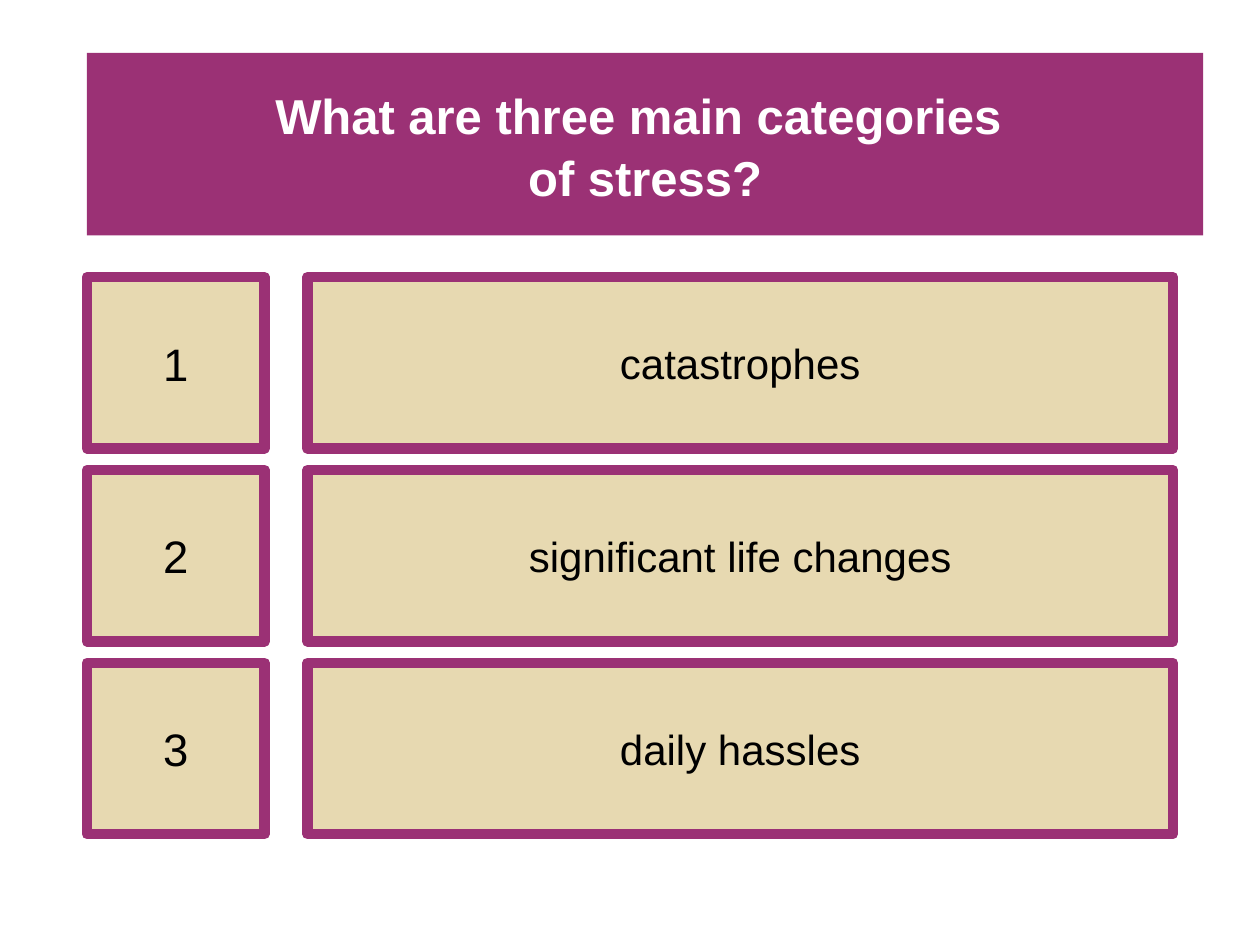
from dataclasses import dataclass
from pptx import Presentation
from pptx.dml.color import RGBColor
from pptx.enum.shapes import MSO_SHAPE
from pptx.enum.text import MSO_ANCHOR, PP_ALIGN
from pptx.util import Pt

RECT = MSO_SHAPE.RECTANGLE
MIDDLE = MSO_ANCHOR.MIDDLE
CENTER = PP_ALIGN.CENTER


@dataclass(frozen=True)
class Theme:
    font: str = "Arial"
    plum: str = "9B3175"
    sand: str = "E7D9B1"
    white: str = "FFFFFF"
    black: str = "000000"
    title: int = 28
    number: int = 26
    answer: int = 24
    border: int = 6


theme = Theme()


def add_box(s, text, x, y, w, h, *, fill, color, size, border=None, bold=False, spacing=1):
    sp = s.shapes.add_shape(RECT, Pt(x), Pt(y), Pt(w), Pt(h))
    sp.shadow.inherit = False
    sp.fill.solid()
    sp.fill.fore_color.rgb = RGBColor.from_string(fill)
    if border:
        sp.line.color.rgb = RGBColor.from_string(border)
        sp.line.width = Pt(theme.border)
    else:
        sp.line.fill.background()
    tf = sp.text_frame
    tf.word_wrap = True
    tf.vertical_anchor = MIDDLE
    p = tf.paragraphs[0]
    p.alignment = CENTER
    p.line_spacing = spacing
    for i, line in enumerate(text.split("\n")):
        if i:
            p.add_line_break()
        r = p.add_run()
        r.text = line
        r.font.name = theme.font
        r.font.size = Pt(size)
        r.font.bold = bold
        r.font.color.rgb = RGBColor.from_string(color)


prs = Presentation()
prs.slide_width, prs.slide_height = Pt(720), Pt(540)
s = prs.slides.add_slide(prs.slide_layouts[6])

left = 49.7
add_box(s, "What are three main categories \nof stress?", left, 30.2, 637.9, 104.4,
        fill=theme.plum, color=theme.white, size=theme.title, bold=True, spacing=1.05)

top, pitch, height = 158.4, 110.2, 97.9
answers = ["catastrophes", "significant life changes", "daily hassles"]
for i, answer in enumerate(answers):
    y = top + i * pitch
    cells = [(str(i + 1), left, 101.5, theme.number), (answer, 175.7, 494.6, theme.answer)]
    for text, x, width, size in cells:
        add_box(s, text, x, y, width, height, fill=theme.sand, color=theme.black,
                size=size, border=theme.plum)

prs.save("out.pptx")
